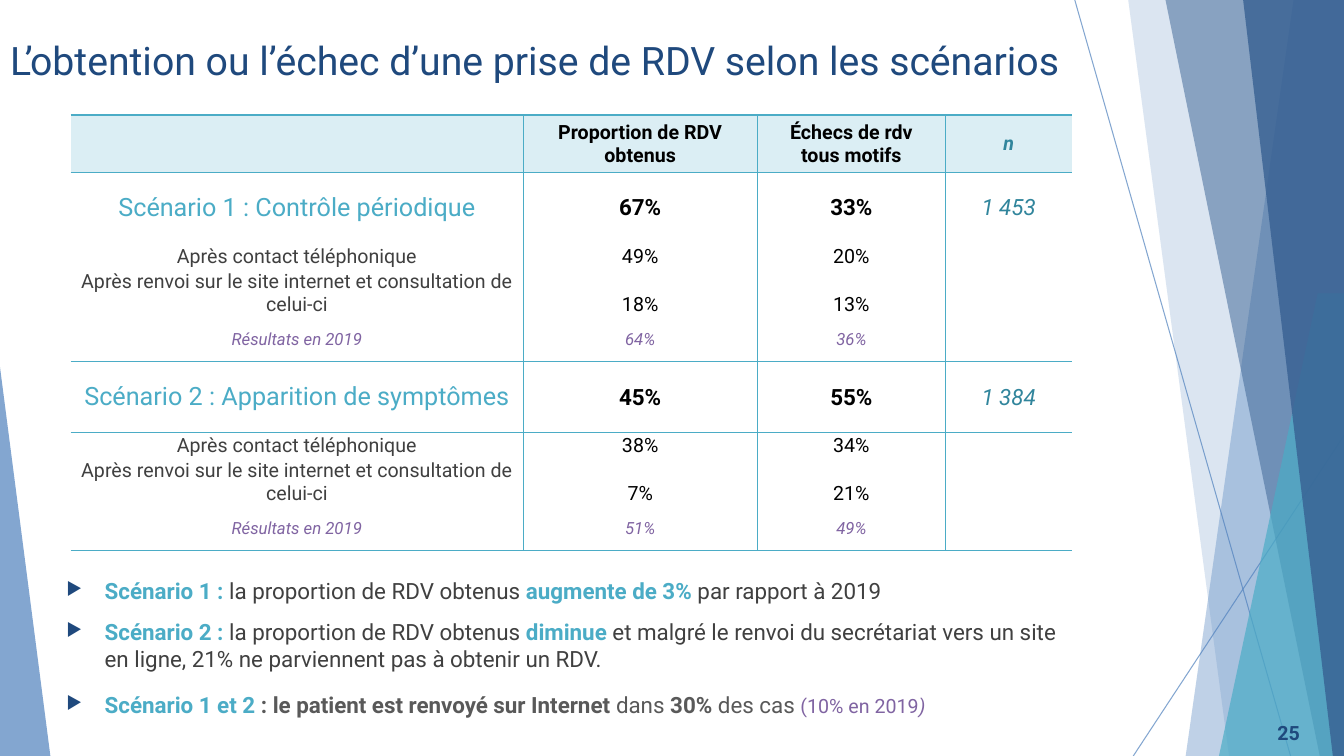
from lxml import etree
from pptx import Presentation
from pptx.dml.color import RGBColor
from pptx.enum import shapes as sh, text as tx
from pptx.oxml import ns
from pptx.util import Inches, Pt

NAVY = RGBColor(0x1F, 0x49, 0x7D)
BLUE = RGBColor(0x4F, 0x81, 0xBD)
DEEP = RGBColor(0x37, 0x60, 0x92)
TEAL = RGBColor(0x4B, 0xAC, 0xC6)
DARK = RGBColor(0x31, 0x85, 0x9C)
PALE = RGBColor(0xDB, 0xEE, 0xF4)
PURPLE = RGBColor(0x80, 0x64, 0xA2)
GREY = RGBColor(0x40, 0x40, 0x40)
MID = RGBColor(0x59, 0x59, 0x59)
BLACK = RGBColor(0, 0, 0)
FONT = "Roboto"

W, H = 13.33, 7.5
RAYS = [((10.66, 0), (12.8, H)), ((W, 4.32), (11.24, H))]
FACETS = [
    ([(12.83, 0), (W, 0), (W, H), (11.76, H)], BLUE, 36),
    ([(11.19, 0), (W, 0), (W, H), (12.19, H)], BLUE, 20),
    ([(11.56, 0), (W, 0), (W, H), (13.09, H)], DEEP, 50),
    ([(13.07, 2.91), (W, 2.91), (W, H), (12.09, H)], TEAL, 70),
    ([(12.33, 0), (W, 0), (W, H), (13.22, H)], DEEP, 80),
]

PHONE = "Après contact téléphonique"
SITE = "Après renvoi sur le site internet et consultation de celui-ci"
PAST = "Résultats en 2019"
COLS = [4.49, 2.32, 1.87, 1.25]
ROWS = [
    ("head", "", "Proportion de RDV obtenus", "Échecs de rdv\ntous motifs", "n"),
    ("main", "Scénario 1 : Contrôle périodique", "67%", "33%", "1 453"),
    ("phone", PHONE, "49%", "20%", ""),
    ("site", SITE, "18%", "13%", ""),
    ("past", PAST, "64%", "36%", ""),
    ("main", "Scénario 2 : Apparition de symptômes", "45%", "55%", "1 384"),
    ("phone", PHONE, "38%", "34%", ""),
    ("site", SITE, "7%", "21%", ""),
    ("past", PAST, "51%", "49%", ""),
]
HEIGHTS = {"head": 0.57, "main": 0.7, "phone": 0.25, "site": 0.46, "past": 0.45}
RULED = {0, 4, 5, 8}
LABEL = (14, GREY, False, False)
VALUE = (14, BLACK, False, False)
NOTE = (12, PURPLE, False, True)
COUNT = (16, DARK, False, True)
LOOKS = {
    "head": (LABEL, (14, BLACK, True, False), (14, DARK, True, True)),
    "main": ((18, TEAL, False, False), (16, BLACK, True, False), COUNT),
    "phone": (LABEL, VALUE, VALUE),
    "site": (LABEL, VALUE, VALUE),
    "past": (NOTE, NOTE, NOTE),
}

POINTS = [
    [("Scénario 1 : ", 16, TEAL, True, False),
     ("la proportion de RDV obtenus ", 16, GREY, False, False),
     ("augmente de 3%", 16, TEAL, True, False),
     (" par rapport à 2019", 16, GREY, False, False)],
    [("Scénario 2 : ", 16, TEAL, True, False),
     ("la proportion de RDV obtenus ", 16, GREY, False, False),
     ("diminue", 16, TEAL, True, False),
     (" et malgré le renvoi du secrétariat vers un site en ligne, "
      "21% ne parviennent pas à obtenir un RDV.", 16, GREY, False, False)],
    [("Scénario 1 et 2 ", 16, TEAL, True, False),
     (": le patient est renvoyé sur Internet ", 16, MID, True, False),
     ("dans ", 16, MID, False, False),
     ("30% ", 16, MID, True, False),
     ("des cas ", 16, MID, False, False),
     ("(10% en 2019", 14, PURPLE, False, False),
     (")", 14, PURPLE, False, True)],
]


def add_node(parent, tag, **attrs):
    return etree.SubElement(parent, ns.qn(tag), attrs)


def style(run, size, color, bold=False, italic=False):
    font = run.font
    font.name, font.size = FONT, Pt(size)
    font.bold, font.italic = bold, italic
    font.color.rgb = color


def fade(shape, alpha):
    for node in shape._element.spPr.iter(ns.qn("a:srgbClr")):
        add_node(node, "a:alpha", val=str(alpha * 1000))


def paint(shape, color, alpha):
    shape.shadow.inherit = False
    shape.fill.solid()
    shape.fill.fore_color.rgb = color
    shape.line.fill.background()
    fade(shape, alpha)


def add_ray(slide, start, end):
    ends = [Inches(v) for v in (*start, *end)]
    ray = slide.shapes.add_connector(sh.MSO_CONNECTOR.STRAIGHT, *ends)
    ray.line.width = Pt(0.75)
    ray.line.color.rgb = BLUE
    fade(ray, 70)
    add_node(ray._element.spPr, "a:effectLst")


def add_facet(slide, points, color, alpha):
    first, *rest = [(Inches(x), Inches(y)) for x, y in points]
    outline = slide.shapes.build_freeform(*first)
    outline.add_line_segments(rest, close=True)
    paint(outline.convert_to_shape(), color, alpha)


def add_wedge(slide):
    wedge = slide.shapes.add_shape(
        sh.MSO_SHAPE.ISOSCELES_TRIANGLE, 0, Inches(3.64), Inches(0.5), Inches(3.86))
    wedge.adjustments[0] = 0
    paint(wedge, BLUE, 70)


def add_title(slide, words):
    title = slide.shapes.title
    slide.shapes._spTree.append(title._element)
    title.left, title.top = Inches(0), Inches(0.26)
    title.width, title.height = Inches(11.38), Inches(0.66)
    frame = title.text_frame
    frame.text = words
    frame.vertical_anchor = tx.MSO_ANCHOR.MIDDLE
    frame.paragraphs[0].alignment = tx.PP_ALIGN.LEFT
    style(frame.paragraphs[0].runs[0], 28, NAVY)


def set_edge(props, side, width):
    edge = add_node(props, "a:ln" + side, w=str(Pt(width)))
    if width:
        fill = add_node(edge, "a:solidFill")
        add_node(fill, "a:srgbClr", val=str(TEAL))
    else:
        add_node(edge, "a:noFill")


def fill_cell(cell, words, look, kind):
    cell.margin_left = cell.margin_right = cell.margin_top = Inches(0.01)
    cell.margin_bottom = 0
    low = kind in ("phone", "site")
    cell.vertical_anchor = tx.MSO_ANCHOR.BOTTOM if low else tx.MSO_ANCHOR.MIDDLE
    cell.text_frame.text = words
    for para in cell.text_frame.paragraphs:
        para.alignment = tx.PP_ALIGN.CENTER
        for run in para.runs:
            style(run, *look)
        if not words:
            add_node(para._p, "a:endParaRPr", sz="1200")
    if kind == "head":
        cell.fill.solid()
        cell.fill.fore_color.rgb = PALE
    else:
        cell.fill.background()


def add_grid(slide):
    frame = slide.shapes.add_table(
        len(ROWS), len(COLS), Inches(0.7), Inches(1.14), Inches(9.93), Inches(4.34))
    grid = frame.table
    grid.first_row = grid.horz_banding = False
    for col, width in zip(grid.columns, COLS):
        col.width = Inches(width)
    for r, (kind, *words) in enumerate(ROWS):
        grid.rows[r].height = Inches(HEIGHTS[kind])
        label, value, count = LOOKS[kind]
        for c, look in enumerate((label, value, value, count)):
            cell = grid.cell(r, c)
            props = cell._tc.get_or_add_tcPr()
            set_edge(props, "L", 1 if c else 0)
            set_edge(props, "R", 1 if c < len(COLS) - 1 else 0)
            set_edge(props, "T", 1 if r == 0 or r - 1 in RULED else 0)
            set_edge(props, "B", 1 if r in RULED else 0)
            fill_cell(cell, words[c], look, kind)


def add_box(slide, left, top, width, height):
    box = slide.shapes.add_textbox(
        Inches(left), Inches(top), Inches(width), Inches(height))
    box.text_frame.word_wrap = True
    return box.text_frame


def add_bullet(para):
    props = para._p.get_or_add_pPr()
    props.set("marL", str(Inches(0.38)))
    props.set("indent", str(Inches(-0.38)))
    color = add_node(props, "a:buClr")
    add_node(color, "a:srgbClr", val=str(NAVY))
    add_node(props, "a:buSzPct", val="80000")
    add_node(props, "a:buChar", char="▶")


def add_points(slide):
    frame = add_box(slide, 0.56, 5.68, 10.09, 1.66)
    for i, parts in enumerate(POINTS):
        para = frame.add_paragraph() if i else frame.paragraphs[0]
        add_bullet(para)
        if i:
            para.space_before = Pt(10)
        for words, *look in parts:
            run = para.add_run()
            run.text = words
            style(run, *look)
    para.line_spacing = 1.2


def add_number(slide):
    frame = add_box(slide, 12.24, 7.07, 0.75, 0.4)
    frame.vertical_anchor = tx.MSO_ANCHOR.MIDDLE
    frame.text = "25"
    frame.paragraphs[0].alignment = tx.PP_ALIGN.RIGHT
    style(frame.paragraphs[0].runs[0], 14, NAVY, True)


def main():
    deck = Presentation()
    deck.slide_width, deck.slide_height = Inches(W), Inches(H)
    slide = deck.slides.add_slide(deck.slide_layouts[5])
    for ray in RAYS:
        add_ray(slide, *ray)
    for facet in FACETS:
        add_facet(slide, *facet)
    add_wedge(slide)
    add_title(slide, "L’obtention ou l’échec d’une prise de RDV selon les scénarios")
    add_points(slide)
    add_number(slide)
    add_grid(slide)
    deck.save("out.pptx")


if __name__ == "__main__":
    main()
